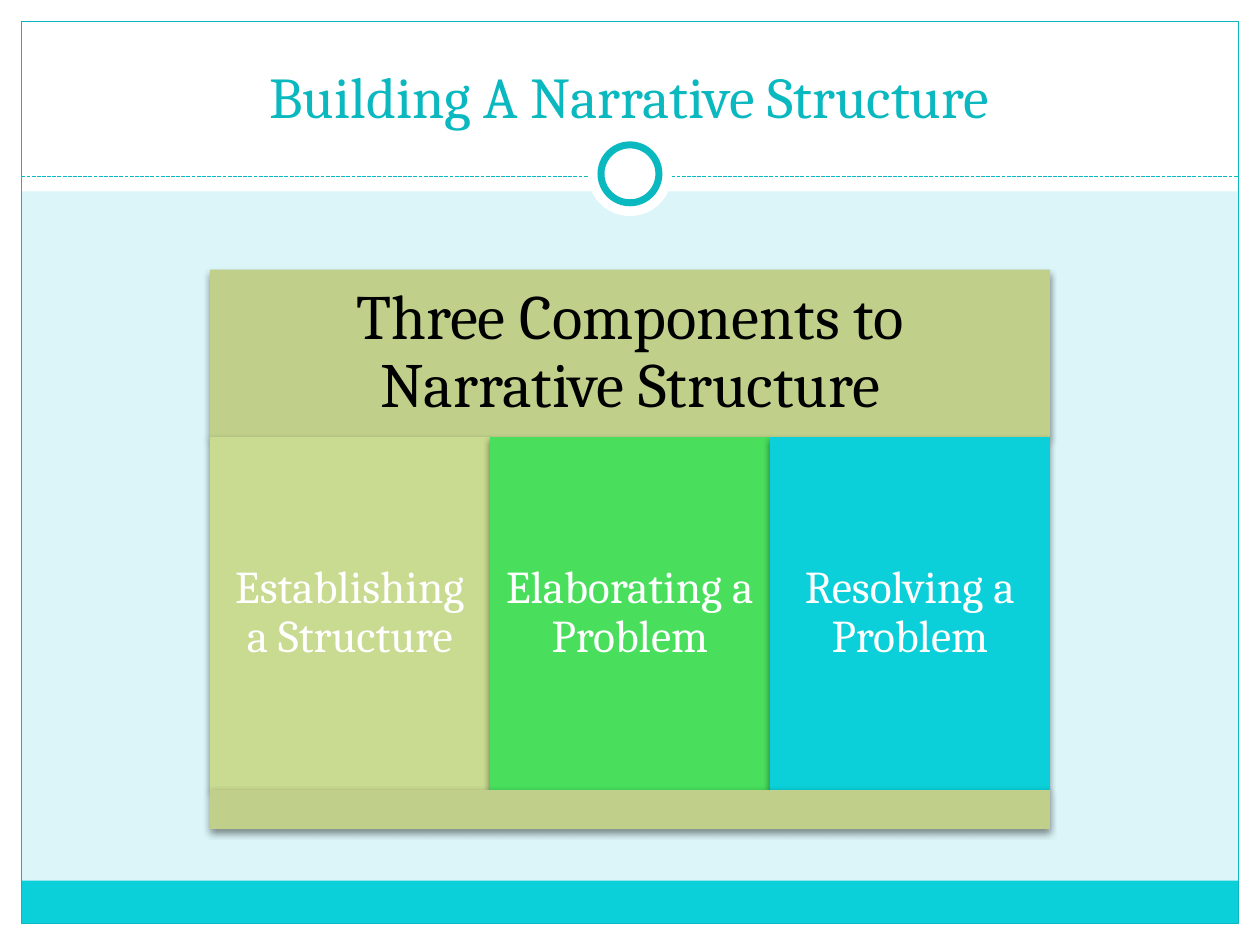
"""Build the narrative structure slide."""
from lxml.etree import SubElement
from pptx import Presentation
from pptx.dml.color import RGBColor
from pptx.enum.dml import MSO_LINE
from pptx.enum.shapes import MSO_CONNECTOR, MSO_SHAPE
from pptx.enum.text import MSO_ANCHOR, MSO_AUTO_SIZE, PP_ALIGN
from pptx.oxml import parse_xml
from pptx.oxml.ns import nsdecls, qn
from pptx.util import Inches, Pt

COLORS = {
    "white": "FFFFFF", "black": "000000", "pale": "DBF5F9", "cyan": "0BD0D9",
    "teal": "0AB8BF", "olive": "C0D08B", "lime": "C9DA91", "green": "49DF5D",
}
SHADOW = (
    f'<a:effectLst {nsdecls("a")}><a:outerShdw blurRad="{Pt(4)}" dist="{Pt(2)}" '
    'dir="5400000" algn="ctr" rotWithShape="0"><a:srgbClr val="000000">'
    '<a:alpha val="45000"/></a:srgbClr></a:outerShdw></a:effectLst>'
)
W, H, EDGE = 10, 7.5, 0.17


def add_box(x, y, w, h, fill=None, line=None, width=0.75, kind=MSO_SHAPE.RECTANGLE, shadow=False):
    sp = s.shapes.add_shape(kind, Inches(x), Inches(y), Inches(w), Inches(h))
    sp.shadow.inherit = False
    if fill:
        sp.fill.solid()
        sp.fill.fore_color.rgb = RGBColor.from_string(COLORS[fill])
    else:
        sp.fill.background()
    if line:
        sp.line.color.rgb = RGBColor.from_string(COLORS[line])
        sp.line.width = Pt(width)
    else:
        sp.line.fill.background()
    if shadow:
        spPr = sp._element.spPr
        spPr.replace(spPr.find(qn("a:effectLst")), parse_xml(SHADOW))
    return sp


def set_text(sp, text, size, color, anchor=MSO_ANCHOR.MIDDLE, inset=0.1, spacing=0.9):
    tf = sp.text_frame
    tf.word_wrap = True
    tf.auto_size = MSO_AUTO_SIZE.NONE
    tf.vertical_anchor = anchor
    tf.margin_left = tf.margin_right = tf.margin_top = tf.margin_bottom = Inches(inset)
    p = tf.paragraphs[0]
    p.alignment = PP_ALIGN.CENTER
    p.line_spacing = spacing
    r = p.add_run()
    r.text = text
    r.font.size = Pt(size)
    r.font.name = "Cambria"
    r.font.color.rgb = RGBColor.from_string(COLORS[color])


prs = Presentation()
prs.slide_width, prs.slide_height = Inches(W), Inches(H)
s = prs.slides.add_slide(prs.slide_layouts[5])
s.background.fill.solid()
s.background.fill.fore_color.rgb = RGBColor.from_string(COLORS["pale"])

for x, y, w, h in [
    (0, H - EDGE, W, EDGE), (0, 0, W, 1.52), (0, 0, EDGE, H), (W - EDGE, 0, EDGE, H),
]:
    add_box(x, y, w, h, "white")
add_box(EDGE, 6.99, W - 2 * EDGE, 0.34, "cyan")
add_box(EDGE, EDGE, W - 2 * EDGE, H - 2 * EDGE, line="teal")

rule = s.shapes.add_connector(
    MSO_CONNECTOR.STRAIGHT, Inches(EDGE), Inches(1.4), Inches(W - EDGE), Inches(1.4))
rule.line.color.rgb = RGBColor.from_string(COLORS["teal"])
rule.line.width = Pt(0.75)
rule.line.dash_style = MSO_LINE.SQUARE_DOT
SubElement(rule._element.spPr, qn("a:effectLst"))

for d, line in [(0.67, None), (0.46, "teal")]:
    add_box((W - d) / 2, 1.38 - d / 2, d, d, "white", line, 4, MSO_SHAPE.OVAL)

title = s.shapes.title
title.left, title.top, title.width, title.height = (Inches(v) for v in (0.33, 0.25, 9.33, 0.83))
set_text(title, "Building A Narrative Structure", 33, "teal", MSO_ANCHOR.BOTTOM, 0.05, 1.0)
s.shapes._spTree.append(title._element)

left, top, col, head, body = W / 6, 2.14, W * 2 / 9, 1.33, 2.8
sp = add_box(left, top, 3 * col, head, "olive", shadow=True)
set_text(sp, "Three Components to Narrative Structure", 36, "black", inset=0.15)
for i, (text, fill) in enumerate([
    ("Establishing a Structure", "lime"),
    ("Elaborating a Problem", "green"),
    ("Resolving a Problem", "cyan"),
]):
    sp = add_box(left + i * col, top + head, col, body, fill, shadow=True)
    set_text(sp, text, 26, "white", inset=0.11)
add_box(left, top + head + body, 3 * col, 0.31, "olive", shadow=True)

prs.save("out.pptx")
